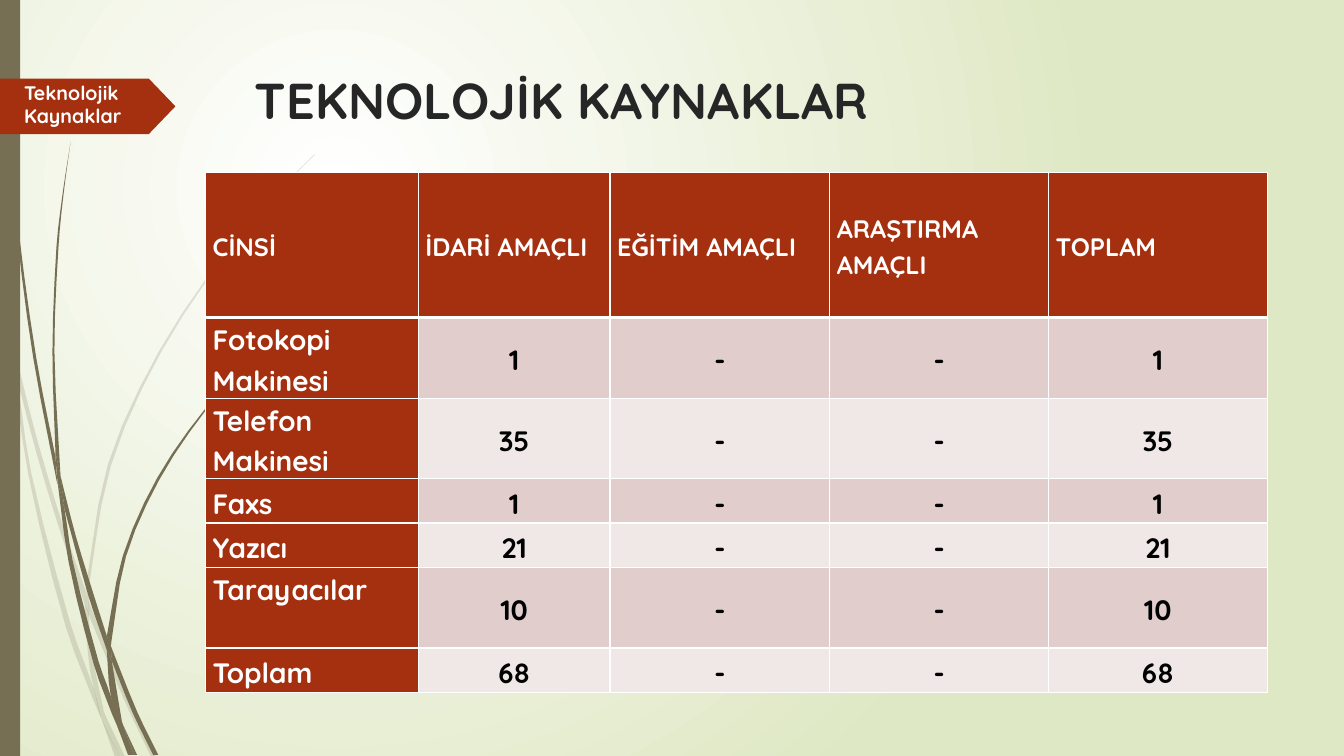
from itertools import pairwise
from math import dist

from lxml.etree import SubElement
from pptx import Presentation
from pptx.dml.color import RGBColor
from pptx.enum.shapes import MSO_SHAPE
from pptx.enum.text import MSO_ANCHOR, PP_ALIGN
from pptx.oxml import parse_xml
from pptx.oxml.ns import nsdecls, qn
from pptx.util import Inches, Pt

RUST = RGBColor(0xA5, 0x30, 0x10)
OLIVE = RGBColor(0x76, 0x6F, 0x54)
LIME = RGBColor(0xDF, 0xE8, 0xC4)
ROSE = RGBColor(0xE1, 0xCD, 0xCC)
BLUSH = RGBColor(0xF0, 0xE8, 0xE7)
WHITE = RGBColor(0xFF, 0xFF, 0xFF)
INK = RGBColor(0x26, 0x26, 0x26)
BLACK = RGBColor(0, 0, 0)

# Each blade of grass: one edge from tip to tip, then the other edge back.
PALE_BLADES = [
    ([(0, 2.82), (.09, 3.22), (.11, 3.5)], [(.1, 3.44), (0, 2.99)]),
    ([(.14, 3.45), (.36, 4.33), (.62, 5.2), (.85, 5.86)],
     [(.84, 5.99), (.58, 5.22), (.36, 4.49), (.17, 3.76)]),
    ([(.88, 5.96), (.92, 6.07), (1.27, 6.92), (1.55, 7.51)],
     [(1.5, 7.51), (1.23, 6.94), (.88, 6.1)]),
    ([(1.05, 7.11), (1.24, 7.51)], [(1.19, 7.51)]),
    ([(.11, 3.5), (.17, 3.76), (.31, 4.69), (.7, 6.19), (.93, 6.83), (1.01, 7.14)],
     [(.92, 6.93), (.65, 6.21), (.28, 4.7), (.11, 3.5)]),
    ([(.84, 5.99), (.87, 6.46), (.93, 6.83), (1.05, 7.11)],
     [(1.03, 7.06), (.91, 6.46), (.88, 6.08)]),
    ([(.88, 5.96), (.88, 5.84), (1.1, 4.62), (1.6, 3.49), (2.29, 2.45), (2.68, 1.98),
      (3.12, 1.54)],
     [(3.12, 1.53), (2.68, 1.97), (2.28, 2.44), (1.58, 3.48), (1.07, 4.61), (.85, 5.84)]),
    ([(1.01, 7.14), (1.14, 7.51)], [(1.19, 7.51)]),
    ([(.85, 5.86), (.88, 5.96), (.88, 6.1)], [(.84, 5.99)]),
    ([(.93, 6.83), (1.01, 7.14), (1.19, 7.51)], [(1.05, 7.11), (.96, 6.92)]),
]
DARK_BLADES = [
    ([(.03, 0), (.04, .48), (.07, 1.1), (.17, 2.33), (.33, 3.55), (.57, 4.81)],
     [(.55, 4.53), (.36, 3.55), (.19, 2.32), (.08, 1.09), (.05, .48), (.04, 0)]),
    ([(.6, 4.72), (.75, 5.31), (.93, 5.9), (1.06, 6.31)],
     [(1.06, 6.45), (.88, 5.92), (.64, 5.05)]),
    ([(1.1, 6.41), (1.36, 7.06), (1.57, 7.49)], [(1.52, 7.49), (1.32, 7.08), (1.11, 6.56)]),
    ([(.57, 4.77), (.64, 5.05), (.72, 5.56), (.98, 6.57), (1.1, 6.91), (1.17, 7.22)],
     [(1.11, 7.08), (.93, 6.59), (.68, 5.57), (.57, 4.77)]),
    ([(.6, 4.72), (.54, 3.49), (.58, 2.45), (.63, 1.93), (.7, 1.41)],
     [(.7, 1.41), (.62, 1.93), (.56, 2.45), (.52, 3.49), (.55, 4.49)]),
    ([(1.22, 7.19), (1.36, 7.49)], [(1.33, 7.49)]),
    ([(.55, 4.49), (.6, 4.72), (.64, 5.05)], [(.57, 4.77), (.55, 4.53)]),
    ([(1.1, 6.41), (1.11, 6.33), (1.25, 5.52), (1.58, 4.76), (2.05, 4.06), (2.61, 3.44)],
     [(2.6, 3.44), (2.04, 4.05), (1.56, 4.74), (1.22, 5.51), (1.06, 6.31)]),
    ([(1.17, 7.22), (1.27, 7.49)], [(1.31, 7.49)]),
    ([(1.06, 6.45), (1.1, 6.91), (1.22, 7.19)], [(1.21, 7.16), (1.11, 6.56)]),
    ([(1.06, 6.31), (1.1, 6.41), (1.11, 6.56)], [(1.06, 6.45)]),
    ([(1.1, 6.91), (1.17, 7.22), (1.3, 7.49)], [(1.33, 7.49), (1.22, 7.19)]),
]

HEADINGS = ["CİNSİ", "İDARİ AMAÇLI", "EĞİTİM AMAÇLI", "ARAŞTIRMA AMAÇLI", "TOPLAM"]
COUNTS = {"Fotokopi Makinesi": 1, "Telefon Makinesi": 35, "Faxs": 1,
          "Yazıcı": 21, "Tarayacılar": 10, "Toplam": 68}
COLUMN_WIDTHS = [2.11, 1.9, 2.18, 2.17, 2.17]
ROW_HEIGHTS = [1.44, .8, .8, .44, .44, .8, .44]


def smooth(points, steps=3):
    """Points along a curve that passes through all the given points."""
    def heading(i):
        start, end = points[max(i - 1, 0)], points[min(i + 1, len(points) - 1)]
        length = dist(start, end)
        return [(b - a) / length for a, b in zip(start, end)]

    if len(points) < 3:
        return points
    curve = [points[0]]
    for i, (start, end) in enumerate(pairwise(points)):
        reach = dist(start, end)
        for t in (step / steps for step in range(1, steps + 1)):
            curve.append(tuple(
                a * (2 * t**3 - 3 * t**2 + 1) + b * (3 * t**2 - 2 * t**3)
                + reach * (u * (t**3 - 2 * t**2 + t) + v * (t**3 - t**2))
                for a, b, u, v in zip(start, end, heading(i), heading(i + 1))))
    return curve


def write(frame, text, size=18, color=WHITE, align=PP_ALIGN.LEFT, spacing=None,
          anchor=MSO_ANCHOR.TOP):
    frame.word_wrap = True
    frame.vertical_anchor = anchor
    para = frame.paragraphs[0]
    para.alignment = align
    para.line_spacing = spacing
    span = para.add_run()
    span.text = text
    span.font.name = "Quicksand"
    span.font.size = Pt(size)
    span.font.bold = True
    span.font.color.rgb = color


class SlideMaker:
    def __init__(self, page):
        self.page = page

    def background(self, center, rim):
        fill = self.page.background.fill
        fill.gradient()
        for stop, color in zip(fill.gradient_stops, (center, rim)):
            stop.color.rgb = color
        gradient = self.page._element.find(".//" + qn("a:gradFill"))
        gradient.replace(gradient.find(qn("a:lin")), parse_xml(
            f'<a:path {nsdecls("a")} path="circle">'
            '<a:fillToRect l="50000" t="50000" r="100000" b="100000"/></a:path>'))

    def paint(self, shape, color, opacity=100):
        shape.shadow.inherit = False
        shape.fill.solid()
        shape.fill.fore_color.rgb = color
        shape.line.fill.background()
        if opacity < 100:
            tint = shape._element.spPr.find(".//" + qn("a:srgbClr"))
            SubElement(tint, qn("a:alpha"), val=str(opacity * 1000))

    def blade(self, edges, opacity=100):
        outline = [(Inches(x), Inches(y)) for edge in edges for x, y in smooth(edge)]
        builder = self.page.shapes.build_freeform(*outline[0])
        builder.add_line_segments(outline[1:])
        self.paint(builder.convert_to_shape(), OLIVE, opacity)

    def shape(self, kind, left, top, width, height, color):
        shape = self.page.shapes.add_shape(
            kind, Inches(left), Inches(top), Inches(width), Inches(height))
        self.paint(shape, color)
        return shape

    def text(self, text, left, top, width, height, **style):
        box = self.page.shapes.add_textbox(
            Inches(left), Inches(top), Inches(width), Inches(height))
        write(box.text_frame, text, **style)

    def cell(self, cell, text, fill, bottom=1, anchor=MSO_ANCHOR.MIDDLE, **style):
        cell.margin_left = cell.margin_right = Inches(.07)
        cell.margin_top = cell.margin_bottom = 0
        cell.fill.solid()
        cell.fill.fore_color.rgb = fill
        for i, (side, weight) in enumerate(dict(L=1, R=1, T=1, B=bottom).items()):
            cell._tc.tcPr.insert(i, parse_xml(
                f'<a:ln{side} {nsdecls("a")} w="{Pt(weight)}"><a:solidFill>'
                f'<a:srgbClr val="{WHITE}"/></a:solidFill></a:ln{side}>'))
        write(cell.text_frame, text, spacing=1.15, **style)
        cell.vertical_anchor = anchor

    def table(self, left, top):
        table = self.page.shapes.add_table(
            len(ROW_HEIGHTS), len(COLUMN_WIDTHS), Inches(left), Inches(top),
            Inches(sum(COLUMN_WIDTHS)), Inches(sum(ROW_HEIGHTS))).table
        for column, width in zip(table.columns, COLUMN_WIDTHS):
            column.width = Inches(width)
        for row, height in zip(table.rows, ROW_HEIGHTS):
            row.height = Inches(height)
        for c, heading in enumerate(HEADINGS):
            self.cell(table.cell(0, c), heading, RUST, bottom=3, align=PP_ALIGN.JUSTIFY)
        for r, (kind, count) in enumerate(COUNTS.items(), 1):
            anchor = MSO_ANCHOR.TOP if kind == "Tarayacılar" else MSO_ANCHOR.MIDDLE
            self.cell(table.cell(r, 0), kind, RUST, size=20, align=PP_ALIGN.JUSTIFY,
                      anchor=anchor)
            for c, value in enumerate([count, "-", "-", count], 1):
                self.cell(table.cell(r, c), str(value), ROSE if r % 2 else BLUSH,
                          size=20, color=BLACK, align=PP_ALIGN.CENTER)


def main():
    deck = Presentation()
    deck.slide_width, deck.slide_height = Inches(13.33), Inches(7.5)
    maker = SlideMaker(deck.slides.add_slide(deck.slide_layouts[6]))
    maker.background(WHITE, LIME)
    for edges in PALE_BLADES:
        maker.blade(edges, opacity=20)
    for edges in DARK_BLADES:
        maker.blade(edges)
    maker.shape(MSO_SHAPE.RECTANGLE, 0, 0, .2, 7.5, OLIVE)
    tag = maker.shape(MSO_SHAPE.PENTAGON, 0, .78, 1.74, .55, RUST)
    tag.adjustments[0] = .48
    maker.text("TEKNOLOJİK KAYNAKLAR", 2.43, .64, 9.75, .78, size=36, color=INK)
    maker.table(2.04, 1.71)
    maker.text("Teknolojik Kaynaklar", .14, .75, 1.74, .57, size=14)
    deck.save("out.pptx")


if __name__ == "__main__":
    main()
